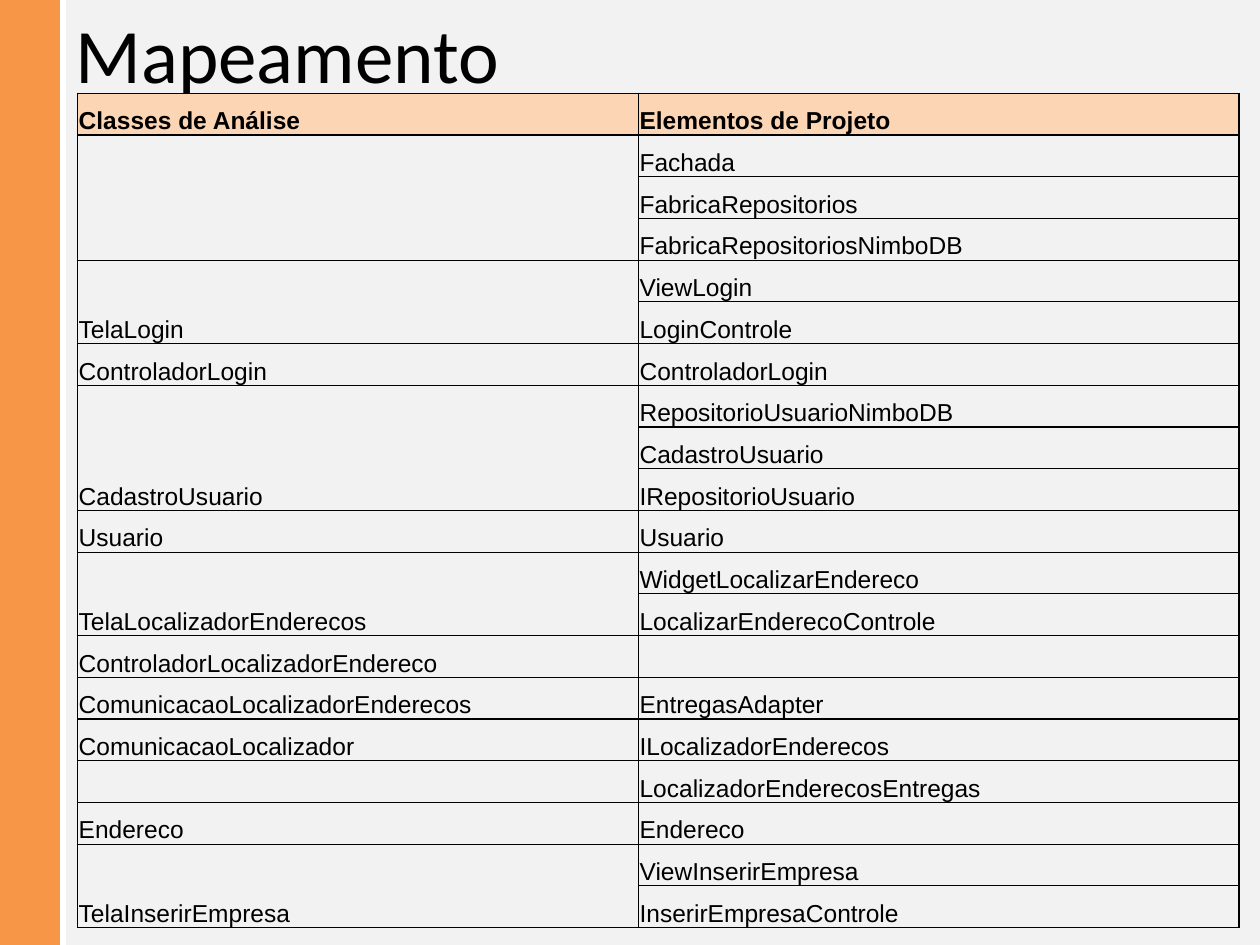
from lxml import etree
from pptx import Presentation
from pptx import util as u
from pptx.dml.color import RGBColor
from pptx.enum import shapes, text
from pptx.oxml.ns import qn

BLACK, WHITE, BACKGROUND = "000000", "FFFFFF", "F2F2F2"
ORANGE, PEACH = "F79646", "FCD5B4"
ROW_HEIGHT = 23.84
COLUMN_WIDTHS = (320.5, 343)
HEADER = ("Classes de Análise", "Elementos de Projeto")
MAPPING = [
    ("", ["Fachada", "FabricaRepositorios", "FabricaRepositoriosNimboDB"]),
    ("TelaLogin", ["ViewLogin", "LoginControle"]),
    ("ControladorLogin", ["ControladorLogin"]),
    ("CadastroUsuario", ["RepositorioUsuarioNimboDB", "CadastroUsuario", "IRepositorioUsuario"]),
    ("Usuario", ["Usuario"]),
    ("TelaLocalizadorEnderecos", ["WidgetLocalizarEndereco", "LocalizarEnderecoControle"]),
    ("ControladorLocalizadorEndereco", [""]),
    ("ComunicacaoLocalizadorEnderecos", ["EntregasAdapter"]),
    ("ComunicacaoLocalizador", ["ILocalizadorEnderecos"]),
    ("", ["LocalizadorEnderecosEntregas"]),
    ("Endereco", ["Endereco"]),
    ("TelaInserirEmpresa", ["ViewInserirEmpresa", "InserirEmpresaControle"]),
]


def color(hex_string):
    """Return the colour for a hex string."""
    return RGBColor.from_string(hex_string)


def place(shape, left, top, width, height):
    """Position a shape, in points."""
    shape.left, shape.top = u.Pt(left), u.Pt(top)
    shape.width, shape.height = u.Pt(width), u.Pt(height)


def format_font(font, name, size, bold=False):
    """Set the typeface, size and weight of black text."""
    font.name, font.size, font.bold = name, u.Pt(size), bold
    font.color.rgb = color(BLACK)


def set_background(slide):
    """Fill the slide background."""
    slide.background.fill.solid()
    slide.background.fill.fore_color.rgb = color(BACKGROUND)


def add_side_bar(slide):
    """Draw the orange bar along the left edge."""
    bar = slide.shapes.add_shape(
        shapes.MSO_SHAPE.RECTANGLE, u.Pt(-10), u.Pt(-6), u.Pt(46), u.Pt(554))
    bar.shadow.inherit = False
    bar.fill.solid()
    bar.fill.fore_color.rgb = color(ORANGE)
    bar.line.color.rgb = color(WHITE)
    bar.line.width = u.Pt(3)


def set_title(slide, words):
    """Write and format the slide title."""
    title = slide.shapes.title
    place(title, 36, -15, 648, 90)
    title.text_frame.text = words
    title.text_frame.vertical_anchor = text.MSO_ANCHOR.MIDDLE
    paragraph = title.text_frame.paragraphs[0]
    paragraph.alignment = text.PP_ALIGN.LEFT
    format_font(paragraph.font, "Calibri", 44)


def set_borders(cell):
    """Give a cell thin black borders on all sides."""
    properties = cell._tc.get_or_add_tcPr()
    for side in ("a:lnL", "a:lnR", "a:lnT", "a:lnB"):
        line = etree.SubElement(properties, qn(side), w=str(u.Pt(0.75)))
        fill = etree.SubElement(line, qn("a:solidFill"))
        etree.SubElement(fill, qn("a:srgbClr"), val=BLACK)


def format_cell(cell, header):
    """Set the borders, fill, margins and font of a cell."""
    set_borders(cell)
    if header:
        cell.fill.solid()
        cell.fill.fore_color.rgb = color(PEACH)
    else:
        cell.fill.background()
    cell.margin_left = cell.margin_right = cell.margin_top = u.Pt(0.5)
    cell.margin_bottom = 0
    cell.vertical_anchor = text.MSO_ANCHOR.BOTTOM
    format_font(cell.text_frame.paragraphs[0].font, "Arial", 14, header)


def add_mapping_table(slide):
    """Add the table that maps analysis classes to design elements."""
    row_count = 1 + sum(len(elements) for _, elements in MAPPING)
    table = slide.shapes.add_table(
        row_count, 2, u.Pt(44.5), u.Pt(53.3),
        u.Pt(sum(COLUMN_WIDTHS)), u.Pt(row_count * ROW_HEIGHT)).table
    table.first_row = table.horz_banding = False
    for column, width in zip(table.columns, COLUMN_WIDTHS):
        column.width = u.Pt(width)
    for row in table.rows:
        row.height = u.Pt(ROW_HEIGHT)

    for column, words in enumerate(HEADER):
        table.cell(0, column).text = words
    first = 1
    for analysis_class, elements in MAPPING:
        table.cell(first, 0).text = analysis_class
        for row, element in enumerate(elements, first):
            table.cell(row, 1).text = element
        last = first + len(elements) - 1
        if last > first:
            table.cell(first, 0).merge(table.cell(last, 0))
        first = last + 1

    for row in range(row_count):
        for column in range(2):
            format_cell(table.cell(row, column), row == 0)


def main():
    """Build the slide and save it."""
    presentation = Presentation()
    presentation.slide_width, presentation.slide_height = u.Pt(720), u.Pt(540)
    slide = presentation.slides.add_slide(presentation.slide_layouts[5])
    set_background(slide)
    add_side_bar(slide)
    set_title(slide, "Mapeamento")
    add_mapping_table(slide)
    presentation.save("out.pptx")


if __name__ == "__main__":
    main()
